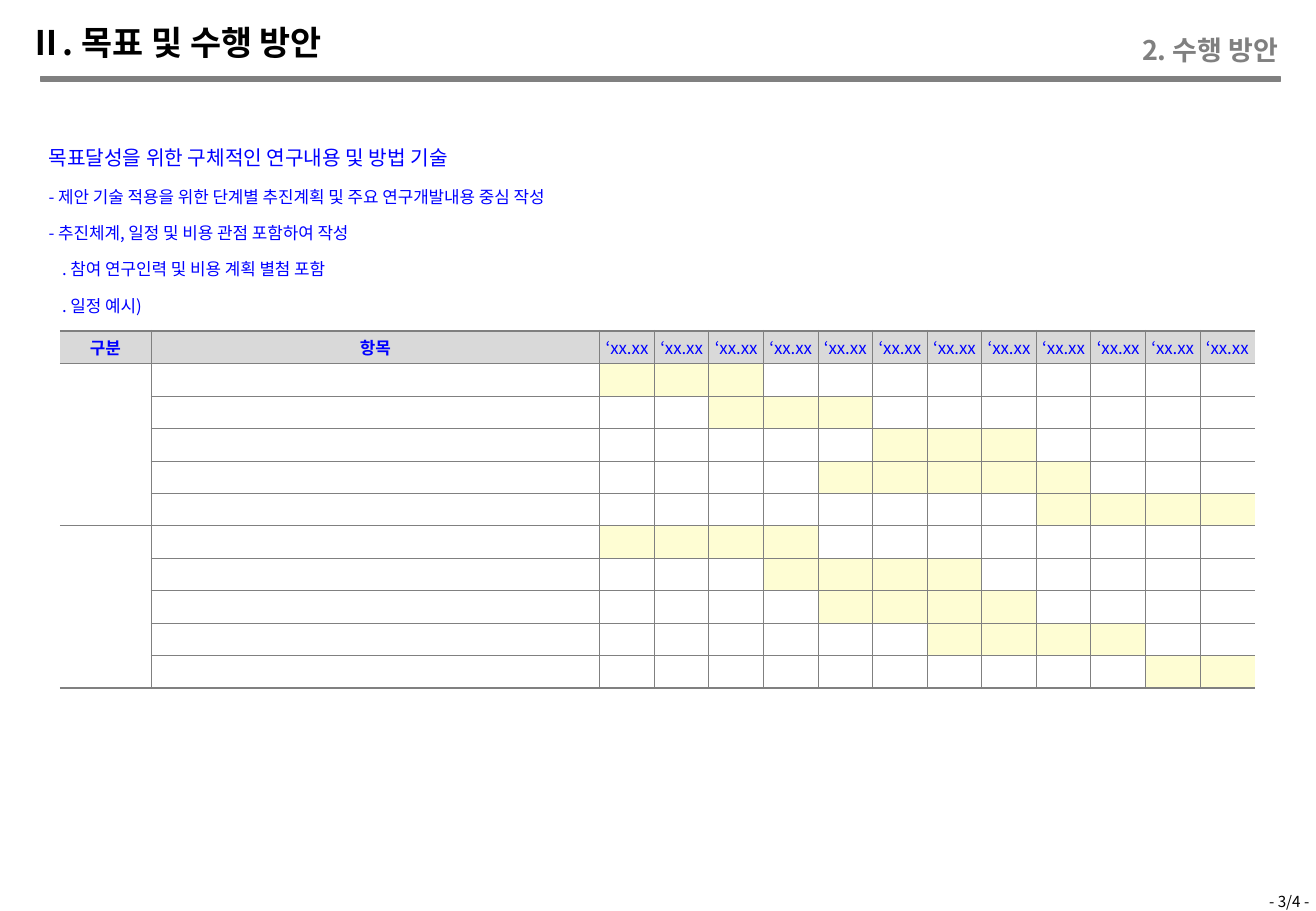
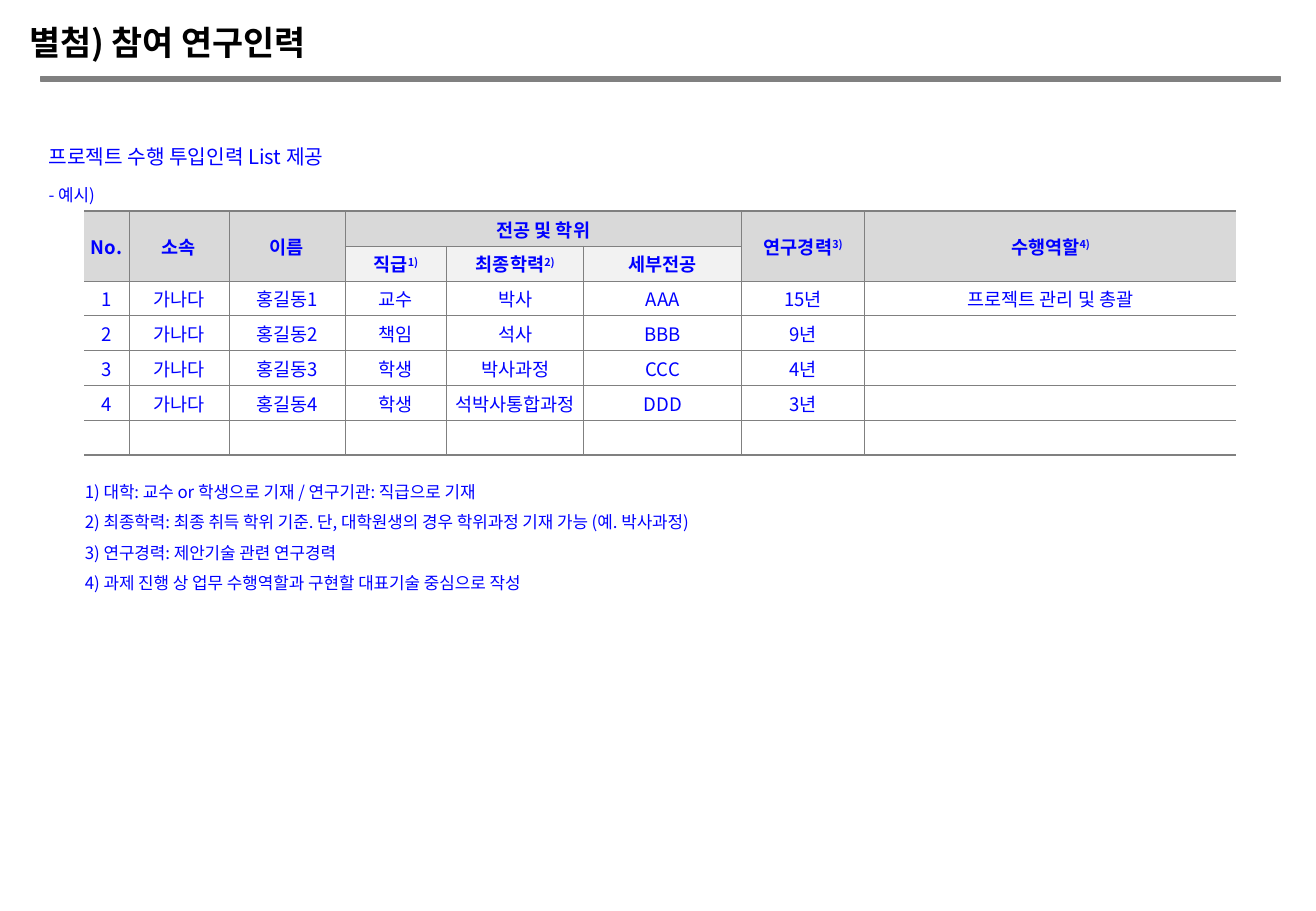
"""Builds two proposal slides: a work schedule and a list of research staff."""
from dataclasses import dataclass
from typing import Optional, Sequence

from lxml.etree import SubElement
from pptx import Presentation
from pptx.dml.color import RGBColor
from pptx.enum.shapes import MSO_SHAPE
from pptx.enum.text import MSO_ANCHOR, MSO_AUTO_SIZE, PP_ALIGN
from pptx.oxml.ns import qn
from pptx.util import Pt


@dataclass(frozen=True)
class Theme:
    font: str = "Noto Sans CJK KR"
    ink: str = "000000"
    grey: str = "808080"
    blue: str = "0000FF"
    header: str = "D9D9D9"
    subheader: str = "F2F2F2"
    bar: str = "FEFDD3"
    title_size: float = 20
    section_size: float = 16
    lead_size: float = 12
    staff_size: float = 11
    text_size: float = 10
    page_size: float = 9
    thin: float = 0.5
    thick: float = 1.5
    no_grid: str = "{2D5ABB26-0587-4C30-8999-92F81FD0307C}"


THEME = Theme()


@dataclass(frozen=True)
class Style:
    size: float
    color: str = THEME.blue
    bold: bool = False
    leading: float = 1.2


@dataclass(frozen=True)
class Line:
    text: str
    style: Style
    level: int = 0


@dataclass(frozen=True)
class Box:
    left: float
    top: float
    width: float
    height: float


@dataclass(frozen=True)
class Entry:
    text: str = ""
    fill: Optional[str] = None
    bold: bool = False
    note: str = ""


@dataclass(frozen=True)
class Span:
    row: int
    column: int
    rows: int = 1
    columns: int = 1

    def covers(self, row: int, column: int) -> bool:
        return (self.row <= row < self.row + self.rows
                and self.column <= column < self.column + self.columns)


TITLE = Style(THEME.title_size, THEME.ink, True)
SECTION = Style(THEME.section_size, THEME.grey, True, 1.44)
LEAD = Style(THEME.lead_size, leading=2.16)
ITEM = Style(THEME.text_size, leading=2.16)
NOTE = Style(THEME.text_size, leading=1.8)
PAGE = Style(THEME.page_size, THEME.ink, leading=1.44)

RULE_BOX = Box(24.5, 45.4, 734.4, 2.9)
TITLE_BOX = Box(10, 9.5, 210, 32)
SECTION_BOX = Box(650, 12.5, 114.6, 30)
PAGE_BOX = Box(716, 527, 60, 13)
NOTES_BOX = Box(43.2, 276, 418, 80)
SUB_INDENT = 8


def place(shape, box: Box) -> None:
    shape.left, shape.top = Pt(box.left), Pt(box.top)
    shape.width, shape.height = Pt(box.width), Pt(box.height)


def add_run(paragraph, text: str, style: Style, raised: bool = False) -> None:
    run = paragraph.add_run()
    run.text = text
    run.font.size = Pt(style.size)
    run.font.bold = style.bold
    run.font.color.rgb = RGBColor.from_string(style.color)
    run.font.name = THEME.font
    properties = run._r.get_or_add_rPr()
    SubElement(properties, qn("a:ea"), typeface=THEME.font)
    if raised:
        properties.set("baseline", "30000")


def write_lines(shape, box: Box, lines: Sequence[Line], align=PP_ALIGN.LEFT,
                inset_x: float = 7.2, inset_y: float = 3.6) -> None:
    place(shape, box)
    frame = shape.text_frame
    frame.word_wrap = True
    frame.auto_size = MSO_AUTO_SIZE.NONE
    frame.vertical_anchor = MSO_ANCHOR.TOP
    frame.margin_left = frame.margin_right = Pt(inset_x)
    frame.margin_top = frame.margin_bottom = Pt(inset_y)
    for index, line in enumerate(lines):
        paragraph = frame.add_paragraph() if index else frame.paragraphs[0]
        paragraph.level = line.level
        paragraph.alignment = align
        paragraph.line_spacing = Pt(line.style.size * line.style.leading)
        paragraph.space_before = paragraph.space_after = Pt(0)
        properties = paragraph._p.get_or_add_pPr()
        properties.set("marL", str(Pt(SUB_INDENT * line.level)))
        properties.set("indent", "0")
        SubElement(properties, qn("a:buNone"))
        add_run(paragraph, line.text, line.style)


def add_text(slide, box: Box, lines: Sequence[Line], **layout) -> None:
    write_lines(slide.shapes.add_textbox(0, 0, 0, 0), box, lines, **layout)


def add_rule(slide) -> None:
    """Draws the title rule and hands it to the slide's layout."""
    rule = slide.shapes.add_shape(MSO_SHAPE.RECTANGLE, 0, 0, 0, 0)
    place(rule, RULE_BOX)
    rule.shadow.inherit = False
    rule.fill.solid()
    rule.fill.fore_color.rgb = RGBColor.from_string(THEME.grey)
    rule.line.color.rgb = RGBColor.from_string(THEME.grey)
    rule.line.width = Pt(1)
    rule.element.nvSpPr.cNvPr.set("id", "20")
    slide.slide_layout.shapes.element.append(rule.element)


def add_page(deck, title: str, body_box: Box, lines: Sequence[Line]):
    slide = deck.slides.add_slide(deck.slide_layouts[1])
    write_lines(slide.shapes.title, TITLE_BOX, [Line(title, TITLE)])
    write_lines(slide.placeholders[1], body_box, lines, inset_y=8.64)
    return slide


def set_border(cell, edge: str, width: float) -> None:
    border = SubElement(cell._tc.get_or_add_tcPr(), qn(edge), w=str(Pt(width)))
    if width:
        fill = SubElement(border, qn("a:solidFill"))
        SubElement(fill, qn("a:srgbClr"), val=THEME.grey)
    else:
        SubElement(border, qn("a:noFill"))


def fill_cell(cell, entry: Entry, size: float) -> None:
    cell.margin_left = cell.margin_right = cell.margin_top = cell.margin_bottom = 0
    cell.vertical_anchor = MSO_ANCHOR.MIDDLE
    if entry.fill:
        cell.fill.solid()
        cell.fill.fore_color.rgb = RGBColor.from_string(entry.fill)
    else:
        cell.fill.background()
    paragraph = cell.text_frame.paragraphs[0]
    paragraph.alignment = PP_ALIGN.CENTER
    style = Style(size, bold=entry.bold)
    if entry.text:
        add_run(paragraph, entry.text, style)
    else:
        SubElement(paragraph._p, qn("a:endParaRPr"), sz=str(int(size * 100)))
    if entry.note:
        add_run(paragraph, entry.note, style, raised=True)


def add_grid(slide, left: float, top: float, widths: Sequence[float], height: float,
             rows: Sequence[Sequence[Entry]], spans: Sequence[Span], size: float) -> None:
    """Draws a table ruled inside, with heavy lines above and below and open sides."""
    last_row, last_column = len(rows), len(widths)
    frame = slide.shapes.add_table(last_row, last_column, Pt(left), Pt(top),
                                   Pt(sum(widths)), Pt(height * last_row))
    table = frame.table
    table.first_row = table.horz_banding = False
    for style_id in frame.element.iter(qn("a:tableStyleId")):
        style_id.text = THEME.no_grid
    for column, width in zip(table.columns, widths):
        column.width = Pt(width)
    for row in table.rows:
        row.height = Pt(height)
    for span in spans:
        table.cell(span.row, span.column).merge(
            table.cell(span.row + span.rows - 1, span.column + span.columns - 1))
    for r, entries in enumerate(rows):
        for c, entry in enumerate(entries):
            span = next((s for s in spans if s.covers(r, c)), Span(r, c))
            first = (r, c) == (span.row, span.column)
            bottom, right = span.row + span.rows, span.column + span.columns
            ends_right = (first or c + 1 == right) and right < last_column
            ends_below = first or r + 1 == bottom
            above = THEME.thin if r else THEME.thick
            below = THEME.thin if bottom < last_row else THEME.thick
            cell = table.cell(r, c)
            set_border(cell, "a:lnL", THEME.thin if c and c == span.column else 0)
            set_border(cell, "a:lnR", THEME.thin if ends_right else 0)
            set_border(cell, "a:lnT", above if r == span.row else 0)
            set_border(cell, "a:lnB", below if ends_below else 0)
            fill_cell(cell, entry, size)


def header(text: str = "", note: str = "", fill: str = THEME.header) -> Entry:
    return Entry(text, fill, True, note)


def add_schedule(deck) -> None:
    months = 12
    active = [(0, 2), (2, 4), (5, 7), (4, 8), (8, 11),
              (0, 3), (3, 6), (4, 7), (6, 9), (10, 11)]
    slide = add_page(deck, "Ⅱ. 목표 및 수행 방안", Box(21.6, 66.2, 544, 130), [
        Line("목표달성을 위한 구체적인 연구내용 및 방법 기술", LEAD),
        Line("- 제안 기술 적용을 위한 단계별 추진계획 및 주요 연구개발내용 중심 작성", ITEM),
        Line("- 추진체계, 일정 및 비용 관점 포함하여 작성", ITEM),
        Line(". 참여 연구인력 및 비용 계획 별첨 포함", ITEM, 1),
        Line(". 일정 예시)", ITEM, 1)])
    add_rule(slide)
    add_text(slide, SECTION_BOX, [Line("2. 수행 방안", SECTION)], align=PP_ALIGN.RIGHT)
    add_text(slide, PAGE_BOX, [Line("- 3/4 -", PAGE)], align=PP_ALIGN.RIGHT,
             inset_x=0, inset_y=0)
    rows = [[header("구분"), header("항목")] + [Entry("‘xx.xx", THEME.header)] * months]
    for start, end in active:
        rows.append([Entry(), Entry()] + [
            Entry(fill=THEME.bar if start <= month <= end else None)
            for month in range(months)])
    add_grid(slide, 35.5, 196.2, [54, 266] + [32.35] * months, 19.25, rows,
             [Span(1, 0, rows=5), Span(6, 0, rows=5)], THEME.text_size)


def add_staff(deck) -> None:
    people = [
        ("1", "가나다", "홍길동1", "교수", "박사", "AAA", "15년", "프로젝트 관리 및 총괄"),
        ("2", "가나다", "홍길동2", "책임", "석사", "BBB", "9년", ""),
        ("3", "가나다", "홍길동3", "학생", "박사과정", "CCC", "4년", ""),
        ("4", "가나다", "홍길동4", "학생", "석박사통합과정", "DDD", "3년", ""),
        ("",) * 8]
    slide = add_page(deck, "별첨) 참여 연구인력", Box(21.6, 65.5, 544, 58), [
        Line("프로젝트 수행 투입인력 List 제공", LEAD),
        Line("- 예시)", ITEM)])
    add_text(slide, NOTES_BOX, [Line(text, NOTE) for text in (
        "1) 대학: 교수 or 학생으로 기재 / 연구기관: 직급으로 기재",
        "2) 최종학력: 최종 취득 학위 기준. 단, 대학원생의 경우 학위과정 기재 가능 (예. 박사과정)",
        "3) 연구경력: 제안기술 관련 연구경력",
        "4) 과제 진행 상 업무 수행역할과 구현할 대표기술 중심으로 작성")])
    rows = [
        [header("No."), header("소속"), header("이름"), header("전공 및 학위"), header(),
         header(), header("연구경력", "3)"), header("수행역할", "4)")],
        [header()] * 3
        + [header("직급", "1)", THEME.subheader), header("최종학력", "2)", THEME.subheader),
           header("세부전공", fill=THEME.subheader)]
        + [header()] * 2]
    rows += [[Entry(text) for text in person] for person in people]
    spans = [Span(0, column, rows=2) for column in (0, 1, 2, 6, 7)]
    add_grid(slide, 49.8, 125.3, [26.7, 59.3, 68.7, 60.4, 81.2, 93.6, 72.9, 220.4],
             20.65, rows, spans + [Span(0, 3, columns=3)], THEME.staff_size)


def main() -> None:
    deck = Presentation()
    deck.slide_width, deck.slide_height = Pt(780), Pt(540)
    add_schedule(deck)
    add_staff(deck)
    deck.save("out.pptx")


if __name__ == "__main__":
    main()
